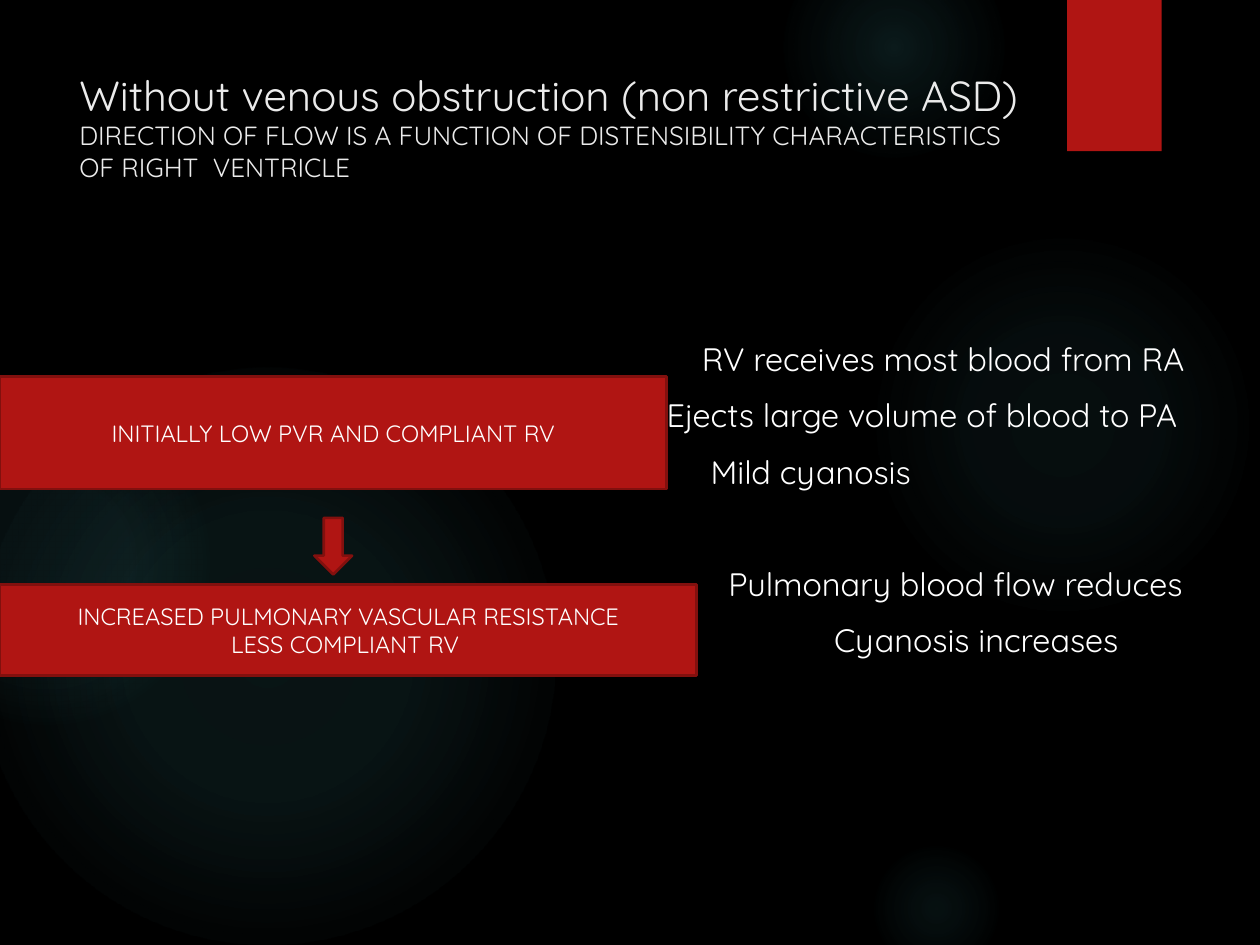
from dataclasses import dataclass

from lxml import etree
from pptx import Presentation
from pptx import util as u
from pptx.dml.color import RGBColor
from pptx.enum import shapes, text
from pptx.oxml import ns

COLUMNS, ROWS = 100, 75
CELL = u.Inches(0.1)


@dataclass(frozen=True)
class Theme:
    font: str = "Quicksand"
    background: str = "000000"
    glow: str = "50B9C1"
    accent: str = "B01513"
    outline: str = "82100E"
    heading: str = "EBEBEB"
    body: str = "FFFFFF"
    title_size: float = 24
    subtitle_size: float = 15
    body_size: float = 18.5
    step_size: float = 13.5


@dataclass(frozen=True)
class Box:
    left: float
    top: float
    width: float
    height: float

    def region(self, left, top, width, height):
        return Box(self.left + left, self.top + top, width, height)

    def lengths(self):
        return [round(side * CELL) for side in (self.left, self.top, self.width, self.height)]


THEME = Theme()


def add_child(parent, tag, **attributes):
    return etree.SubElement(parent, ns.qn(tag), attributes)


def add_color(parent, color, alpha):
    element = add_child(parent, "a:srgbClr", val=color)
    add_child(element, "a:alpha", val=str(alpha * 1000))


def add_run(paragraph, words, size, color):
    run = paragraph.add_run()
    run.text = words
    run.font.name = THEME.font
    run.font.size = u.Pt(size)
    run.font.color.rgb = RGBColor.from_string(color)


def add_block(slide, kind, box, outlined=True):
    shape = slide.shapes.add_shape(kind, *box.lengths())
    shape.shadow.inherit = False
    shape.fill.solid()
    shape.fill.fore_color.rgb = RGBColor.from_string(THEME.accent)
    if outlined:
        shape.line.color.rgb = RGBColor.from_string(THEME.outline)
        shape.line.width = u.Pt(1.5)
    else:
        shape.line.fill.background()
    return shape


def add_halo(slide, box, stops):
    shape = slide.shapes.add_shape(shapes.MSO_SHAPE.OVAL, *box.lengths())
    shape.shadow.inherit = False
    shape.line.fill.background()
    shape.fill.gradient()
    gradient = shape.element.spPr.find(ns.qn("a:gradFill"))
    for child in list(gradient):
        gradient.remove(child)
    stop_list = add_child(gradient, "a:gsLst")
    for position, alpha in stops:
        stop = add_child(stop_list, "a:gs", pos=str(position * 1000))
        add_color(stop, THEME.glow, alpha)
    center = add_child(gradient, "a:path", path="circle")
    add_child(center, "a:fillToRect", l="50000", t="50000", r="50000", b="50000")


def place_backdrop(slide, box):
    slide.background.fill.solid()
    slide.background.fill.fore_color.rgb = RGBColor.from_string(THEME.background)
    halos = [
        (68.9, 18.3, 30.8, 7, 6, 69),
        (62.2, -5, 17.5, 14, 7, 73),
        (68.9, 66.7, 10.8, 9, 5, 66),
        (-1.7, 29.2, 45.8, 11, 10, 75),
        (-9.2, 31.7, 25.8, 8, 8, 72),
    ]
    for left, top, size, inner, middle, edge in halos:
        add_halo(slide, box.region(left, top, size, size), [(0, inner), (36, middle), (edge, 0)])
    ribbon = add_block(slide, shapes.MSO_SHAPE.RECTANGLE, box.region(84.7, 0, 7.5, 12), outlined=False)
    effects = ribbon.element.spPr.find(ns.qn("a:effectLst"))
    shadow = add_child(effects, "a:outerShdw", blurRad=str(u.Pt(3)), dist=str(u.Pt(2)), dir="5400000")
    add_color(shadow, "000000", 45)


def move_placeholder(slide, placeholder, box):
    slide.shapes.element.append(placeholder.element)
    placeholder.left, placeholder.top, placeholder.width, placeholder.height = box.lengths()
    frame = placeholder.text_frame
    frame.word_wrap = True
    frame.auto_size = text.MSO_AUTO_SIZE.NONE
    frame.vertical_anchor = text.MSO_ANCHOR.TOP
    return frame


def place_heading(slide, box):
    paragraph = move_placeholder(slide, slide.shapes.title, box).paragraphs[0]
    paragraph.alignment = text.PP_ALIGN.LEFT
    add_run(paragraph, "Without venous obstruction (non restrictive ASD)", THEME.title_size, THEME.heading)
    paragraph.add_line_break()
    add_run(
        paragraph,
        "DIRECTION OF FLOW IS A FUNCTION OF DISTENSIBILITY CHARACTERISTICS OF RIGHT  VENTRICLE",
        THEME.subtitle_size,
        THEME.heading,
    )


def place_findings(slide, box):
    frame = move_placeholder(slide, slide.placeholders[1], box)
    findings = [
        ("RV receives most blood from RA", 45.7, 0),
        ("Ejects large volume of blood to PA", 42.9, 10),
        ("Mild cyanosis", 46.4, 10),
        ("Pulmonary blood flow reduces", 47.8, 42),
        ("Cyanosis increases", 56.2, 10),
    ]
    for index, (words, indent, space) in enumerate(findings):
        paragraph = frame.add_paragraph() if index else frame.paragraphs[0]
        paragraph.space_before = u.Pt(space)
        properties = paragraph._p.get_or_add_pPr()
        properties.set("marL", str(round(indent * CELL)))
        properties.set("indent", "0")
        add_child(properties, "a:buNone")
        add_run(paragraph, words, THEME.body_size, THEME.body)


def add_step(slide, box, lines):
    frame = add_block(slide, shapes.MSO_SHAPE.RECTANGLE, box).text_frame
    frame.word_wrap = True
    frame.vertical_anchor = text.MSO_ANCHOR.MIDDLE
    for index, words in enumerate(lines):
        paragraph = frame.add_paragraph() if index else frame.paragraphs[0]
        paragraph.alignment = text.PP_ALIGN.CENTER
        add_run(paragraph, words, THEME.step_size, THEME.body)


def place_flow(slide, box):
    first_width, arrow_width = 52.9, 3
    add_step(slide, box.region(0, 0, first_width, 8.9), ["INITIALLY LOW PVR AND COMPLIANT RV"])
    add_step(
        slide,
        box.region(0, 16.5, box.width, box.height - 16.5),
        ["INCREASED PULMONARY VASCULAR RESISTANCE", "LESS COMPLIANT RV "],
    )
    arrow_box = box.region((first_width - arrow_width) / 2, 11.2, arrow_width, 4.5)
    add_block(slide, shapes.MSO_SHAPE.DOWN_ARROW, arrow_box)


def main():
    presentation = Presentation()
    presentation.slide_width = COLUMNS * CELL
    presentation.slide_height = ROWS * CELL
    slide = presentation.slides.add_slide(presentation.slide_layouts[1])
    place_backdrop(slide, Box(0, 0, COLUMNS, ROWS))
    place_heading(slide, Box(5.3, 5, 77.2, 15.3))
    place_findings(slide, Box(9, 26.4, 91, 34.4))
    place_flow(slide, Box(0, 29.9, 55.3, 23.7))
    presentation.save("out.pptx")


if __name__ == "__main__":
    main()
